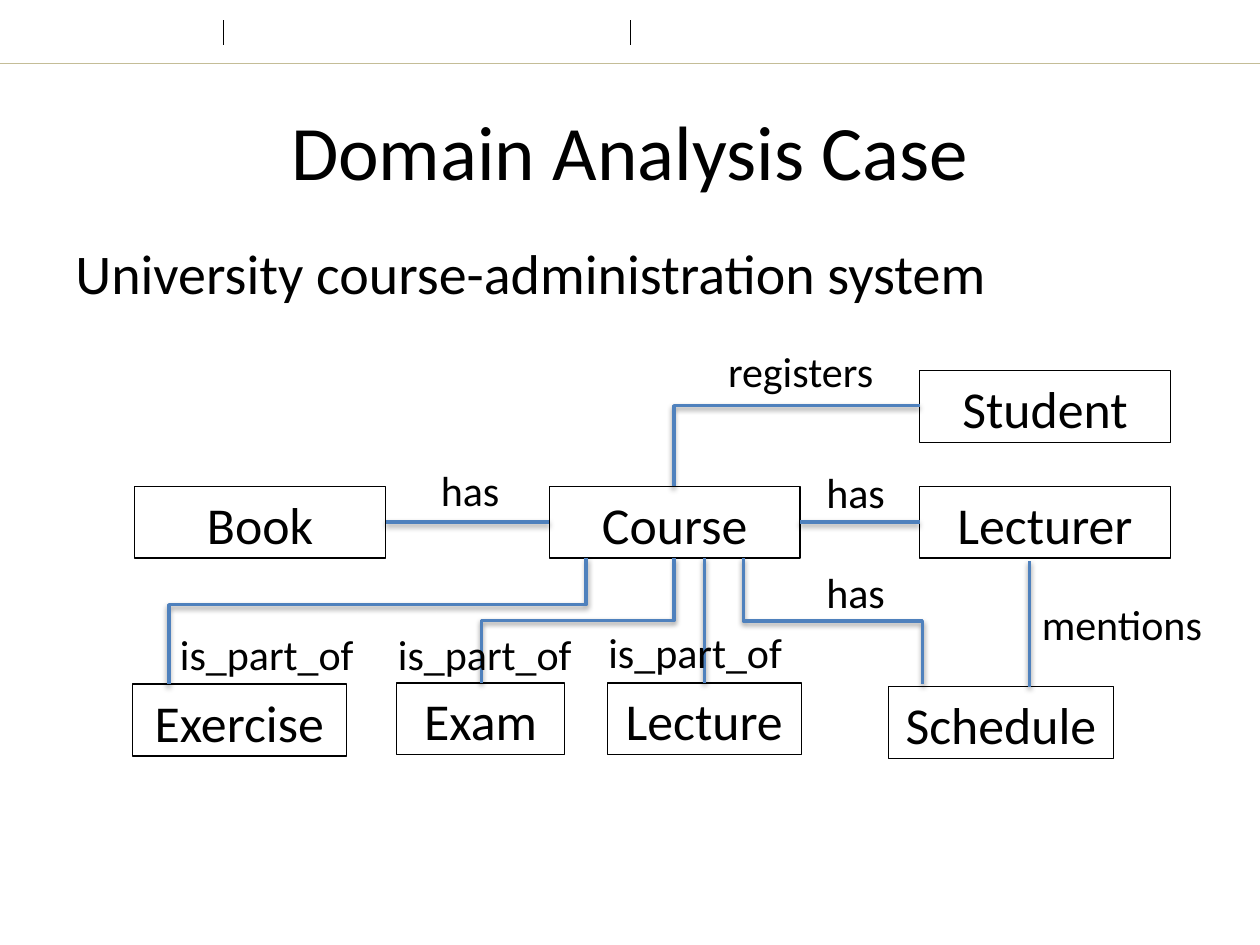
from lxml import etree
from pptx import Presentation
from pptx import util as u
from pptx.dml.color import RGBColor
from pptx.enum import shapes, text
from pptx.oxml import ns

BLACK = RGBColor(0x00, 0x00, 0x00)
BLUE = RGBColor(0x4F, 0x81, 0xBD)
TAN = RGBColor(0xC4, 0xBD, 0x97)
FONT = "Calibri"
TOP, LEFT, BOTTOM, RIGHT = range(4)
COLUMNS, ROWS = 100, 75
CELL = u.Inches(10) / COLUMNS
BOX_ROWS = 5.7
COURSE_BOTTOM = 44.3

BOXES = {
    "Student": (73, 29.4, 19.9),
    "Course": (43.6, 38.6, 19.9),
    "Lecturer": (73, 38.6, 19.9),
    "Book": (10.7, 38.6, 19.9),
    "Exercise": (10.5, 54.3, 17),
    "Exam": (31.5, 54.2, 13.3),
    "Lecture": (48.2, 54.2, 15.4),
    "Schedule": (70.5, 54.5, 17.9),
}
LABELS = [
    ("registers", 56.8, 26.9, 13.7),
    ("has", 34, 36.4, 6.7),
    ("has", 64.6, 36.5, 6.7),
    ("has", 64.6, 44.5, 6.7),
    ("mentions", 81.7, 47, 14.9),
    ("is_part_of", 13.3, 49.4, 16),
    ("is_part_of", 30.6, 49.4, 16),
    ("is_part_of", 47.3, 49.2, 16),
]


def grid(*cells):
    return [u.Emu(round(c * CELL)) for c in cells]


def write(s, words, size, align=text.PP_ALIGN.LEFT, anchor=text.MSO_ANCHOR.TOP, wrap=False):
    tf = s.text_frame
    tf.word_wrap = wrap
    tf.vertical_anchor = anchor
    p = tf.paragraphs[0]
    p.text = words
    p.alignment = align
    p.font.name = FONT
    p.font.size = u.Pt(size)
    p.font.color.rgb = BLACK


def add_title(s, words):
    title = s.shapes.title
    title.left, title.top, title.width, title.height = grid(5, 5, 90, 13.8)
    write(title, words, 44, text.PP_ALIGN.CENTER, text.MSO_ANCHOR.MIDDLE, True)


def add_text(s, words, size, *place, wrap=False):
    write(s.shapes.add_textbox(*grid(*place)), words, size, wrap=wrap)


def add_box(s, words, left, top, width):
    box = s.shapes.add_shape(shapes.MSO_SHAPE.RECTANGLE, *grid(left, top, width, BOX_ROWS))
    box.shadow.inherit = False
    box.fill.background()
    box.line.color.rgb = BLACK
    box.line.width = u.Pt(0.75)
    write(box, words, 29.6, text.PP_ALIGN.CENTER)
    return box


def add_line(s, start, end, color, width, kind=shapes.MSO_CONNECTOR.STRAIGHT):
    line = s.shapes.add_connector(kind, *grid(*start, *end))
    line.line.color.rgb = color
    line.line.width = u.Pt(width)
    etree.SubElement(line._element.spPr, ns.qn("a:effectLst"))
    return line


def add_shadow(line):
    effects = line._element.spPr.find(ns.qn("a:effectLst"))
    shadow = etree.SubElement(
        effects, ns.qn("a:outerShdw"), blurRad=str(u.Pt(3.1)), dist=str(u.Pt(1.6)),
        dir="5400000", algn="ctr", rotWithShape="0")
    color = etree.SubElement(shadow, ns.qn("a:srgbClr"), val=str(BLACK))
    etree.SubElement(color, ns.qn("a:alpha"), val="38000")


def add_link(s, start, end):
    link = add_line(s, start, end, BLUE, 2)
    add_shadow(link)
    return link


def add_elbow(s, start, end, bend=None):
    link = add_line(s, start, end, BLUE, 2, shapes.MSO_CONNECTOR.ELBOW)
    add_shadow(link)
    (x1, y1), (x2, y2) = start, end
    down, right = y2 > y1, x2 > x1
    width, height = abs(y2 - y1), abs(x2 - x1)
    link.left, link.top, link.width, link.height = grid(
        (x1 + x2 - width) / 2, (y1 + y2 - height) / 2, width, height)
    xfrm = link._element.spPr.find(ns.qn("a:xfrm"))
    xfrm.set("rot", str((90 if down else 270) * 60000))
    xfrm.set("flipH", "0")
    xfrm.set("flipV", "1" if down == right else "0")
    geometry = link._element.spPr.find(ns.qn("a:prstGeom"))
    if bend is None:
        geometry.set("prst", "bentConnector2")
    else:
        guides = geometry.find(ns.qn("a:avLst"))
        etree.SubElement(guides, ns.qn("a:gd"), name="adj1", fmla=f"val {round(bend * 100000)}")


def add_header(s):
    add_line(s, (0, 5), (COLUMNS, 5), TAN, 0.25)
    for x in (17.7, 50):
        add_line(s, (x, 1.6), (x, 3.6), BLACK, 0.5)


def add_links(s, boxes):
    for start, end, x1, x2 in (("Lecturer", "Course", 73, 63.5), ("Course", "Book", 43.6, 30.6)):
        link = add_link(s, (x1, 41.4), (x2, 41.4))
        link.begin_connect(boxes[start], LEFT)
        link.end_connect(boxes[end], RIGHT)
    link = add_link(s, (55.9, 54.2), (55.9, COURSE_BOTTOM))
    link.begin_connect(boxes["Lecture"], TOP)
    add_link(s, (81.7, 54.5), (81.7, 44.5))
    add_elbow(s, (53.5, 38.6), (73, 32.2))
    for x1, x2, y2, bend in ((46.5, 13.4, 54.3, 0.37), (53.5, 38.2, 54.2, 0.5), (59, 73.2, 54.3, 0.5)):
        add_elbow(s, (x1, COURSE_BOTTOM), (x2, y2), bend)


def main():
    prs = Presentation()
    prs.slide_width, prs.slide_height = grid(COLUMNS, ROWS)
    s = prs.slides.add_slide(prs.slide_layouts[5])
    add_header(s)
    add_title(s, "Domain Analysis Case")
    add_text(s, "University course-administration system", 32, 5, 18.4, 90, 6.7, wrap=True)
    boxes = {name: add_box(s, name, *place) for name, place in BOXES.items()}
    add_links(s, boxes)
    for words, left, top, width in LABELS:
        add_text(s, words, 24, left, top, width, 5)
    prs.save("out.pptx")


if __name__ == "__main__":
    main()
